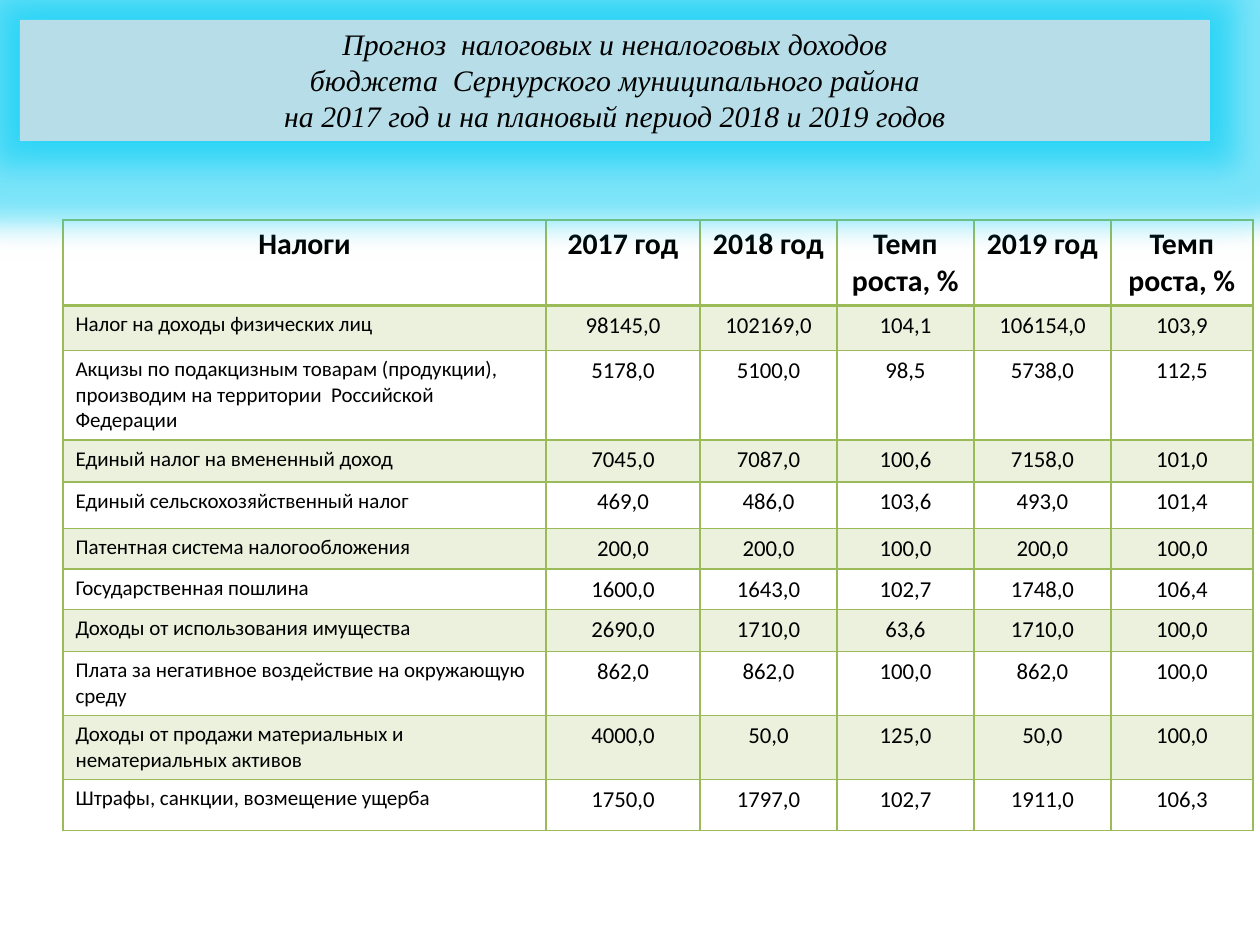
from lxml import etree
from pptx import Presentation
from pptx import util as u
from pptx.dml.color import RGBColor
from pptx.enum import shapes, text
from pptx.oxml import parse_xml
from pptx.oxml.ns import nsdecls, qn

PX = 914400 // 126
BLACK = RGBColor(0x00, 0x00, 0x00)
GREEN = RGBColor(0x9B, 0xBB, 0x59)
PALE_BLUE = RGBColor(0xB7, 0xDE, 0xE8)
CYAN = RGBColor(0x00, 0xCC, 0xF5)

TITLE = [
    "Прогноз  налоговых и неналоговых доходов",
    "бюджета  Сернурского муниципального района",
    "на 2017 год и на плановый период 2018 и 2019 годов",
]
COLS = [483, 154, 137, 137, 137, 142]
ROWS = [85, 45, 89, 42, 47, 40, 40, 42, 64, 64, 51]
TAXES = [
    ["Налоги", "2017 год", "2018 год", "Темп роста, %", "2019 год", "Темп роста, %"],
    ["Налог на доходы физических лиц", "98145,0", "102169,0", "104,1", "106154,0", "103,9"],
    ["Акцизы по подакцизным товарам (продукции), производим на территории  Российской Федерации",
     "5178,0", "5100,0", "98,5", "5738,0", "112,5"],
    ["Единый налог на вмененный доход", "7045,0", "7087,0", "100,6", "7158,0", "101,0"],
    ["Единый сельскохозяйственный налог", "469,0", "486,0", "103,6", "493,0", "101,4"],
    ["Патентная система налогообложения", "200,0", "200,0", "100,0", "200,0", "100,0"],
    ["Государственная пошлина", "1600,0", "1643,0", "102,7", "1748,0", "106,4"],
    ["Доходы от использования имущества", "2690,0", "1710,0", "63,6", "1710,0", "100,0"],
    ["Плата за негативное воздействие на окружающую среду",
     "862,0", "862,0", "100,0", "862,0", "100,0"],
    ["Доходы от продажи материальных и нематериальных активов",
     "4000,0", "50,0", "125,0", "50,0", "100,0"],
    ["Штрафы, санкции, возмещение ущерба", "1750,0", "1797,0", "102,7", "1911,0", "106,3"],
]


def px(n):
    return u.Emu(n * PX)


def put_text(tf, lines, size, font="Calibri", color=BLACK, bold=False, italic=False,
             align=text.PP_ALIGN.CENTER):
    for i, line in enumerate(lines):
        p = tf.add_paragraph() if i else tf.paragraphs[0]
        p.alignment = align
        r = p.add_run()
        r.text = line
        f = r.font
        f.name, f.size, f.bold, f.italic = font, u.Pt(size), bold, italic
        f.color.rgb = color


def add_glow(sp, color, radius, blur):
    sp.shadow.inherit = False
    effects = sp._element.spPr.find(qn("a:effectLst"))
    for tag, size, alpha in (("glow", {"rad": radius}, 45),
                             ("outerShdw", {"blurRad": blur, "dist": 0, "algn": "ctr"}, 60)):
        effect = etree.SubElement(effects, qn(f"a:{tag}"))
        for name, value in size.items():
            effect.set(name, str(value))
        clr = etree.SubElement(effect, qn("a:srgbClr"), val=str(color))
        etree.SubElement(clr, qn("a:alpha"), val=str(alpha * 1000))


def style_cell(cell, widths, shaded):
    tcPr = cell._tc.get_or_add_tcPr()
    for side, width in widths.items():
        tcPr.append(parse_xml(
            f'<a:ln{side} {nsdecls("a")} w="{u.Pt(width)}"><a:solidFill>'
            f'<a:srgbClr val="{GREEN}"/></a:solidFill></a:ln{side}>'))
    if shaded:
        cell.fill.solid()
        cell.fill.fore_color.rgb = GREEN
        clr = tcPr.find(qn("a:solidFill")).find(qn("a:srgbClr"))
        etree.SubElement(clr, qn("a:alpha"), val="20000")
    else:
        cell.fill.background()


def add_title(s, x, y, w, h):
    sp = s.shapes.add_shape(shapes.MSO_SHAPE.RECTANGLE, px(x), px(y), px(w), px(h))
    sp.fill.solid()
    sp.fill.fore_color.rgb = PALE_BLUE
    sp.line.fill.background()
    add_glow(sp, CYAN, px(55), px(30))
    tf = sp.text_frame
    tf.word_wrap = True
    tf.auto_size = text.MSO_AUTO_SIZE.SHAPE_TO_FIT_TEXT
    tf.vertical_anchor = text.MSO_ANCHOR.TOP
    put_text(tf, TITLE, 17, font="Times New Roman", italic=True)


def add_taxes(s, x, y):
    table = s.shapes.add_table(len(ROWS), len(COLS), px(x), px(y),
                               px(sum(COLS)), px(sum(ROWS))).table
    for col, w in zip(table.columns, COLS):
        col.width = px(w)
    for row, h in zip(table.rows, ROWS):
        row.height = px(h)
    for i, values in enumerate(TAXES):
        widths = {"L": 1, "R": 1, "T": 2 if i == 1 else 1, "B": 2 if i == 0 else 1}
        for j, value in enumerate(values):
            cell = table.cell(i, j)
            style_cell(cell, widths, i % 2 == 1)
            if i == 0:
                put_text(cell.text_frame, [value], 17, bold=True)
            elif j == 0:
                put_text(cell.text_frame, [value], 12, align=text.PP_ALIGN.LEFT)
            else:
                put_text(cell.text_frame, [value], 13)


def main():
    prs = Presentation()
    prs.slide_width, prs.slide_height = u.Inches(10), u.Inches(7.5)
    s = prs.slides.add_slide(prs.slide_layouts[6])
    add_taxes(s, 63, 220)
    add_title(s, 20, 20, 1190, 121)
    prs.save("out.pptx")


if __name__ == "__main__":
    main()
